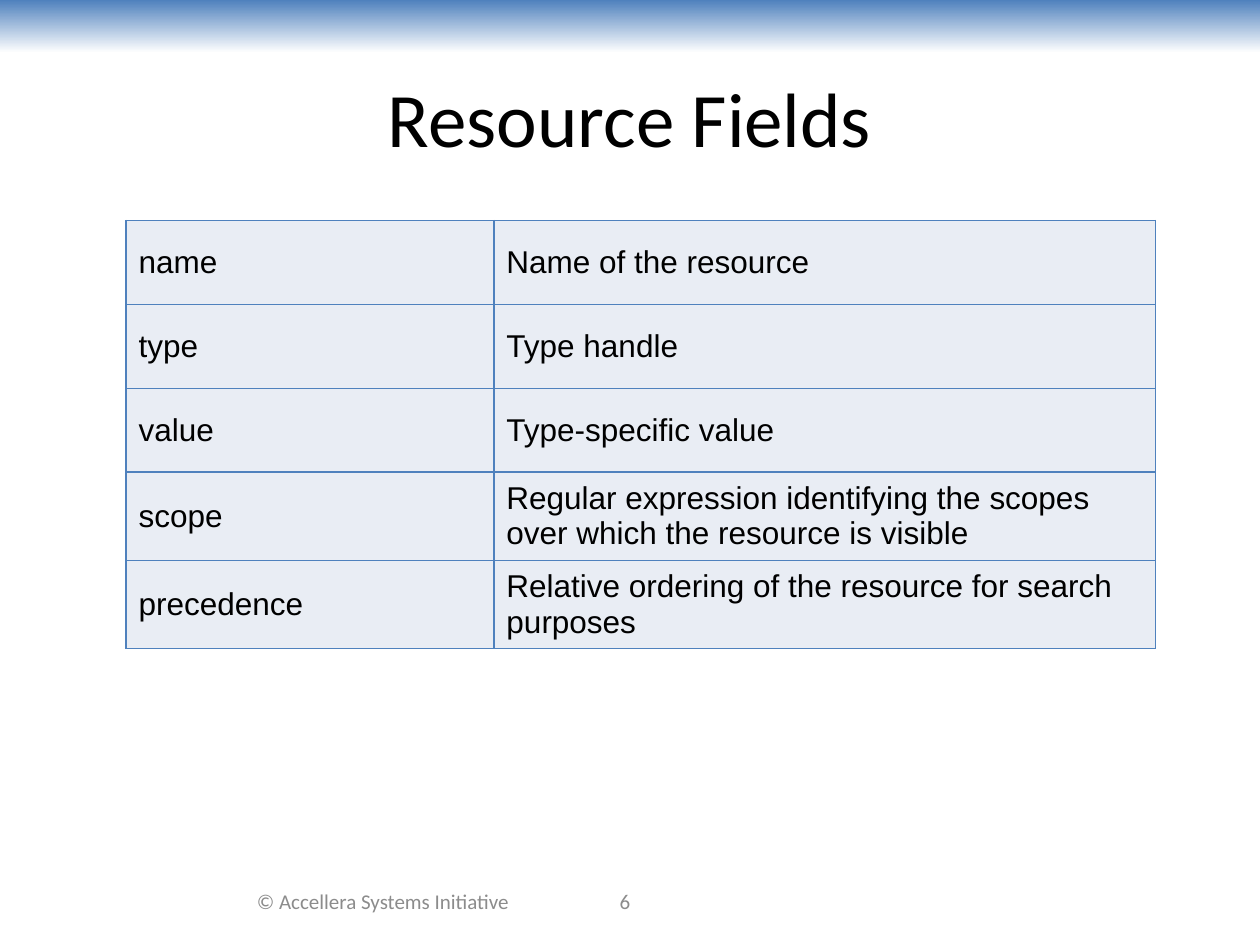
from lxml import etree
from pptx import Presentation
from pptx import util as u
from pptx.dml.color import RGBColor
from pptx.enum import shapes, text
from pptx.oxml.ns import qn

BLUE = RGBColor(0x4F, 0x81, 0xBD)
WHITE = RGBColor(0xFF, 0xFF, 0xFF)
BLACK = RGBColor(0, 0, 0)
GREY = RGBColor(0x8C, 0x8C, 0x8C)
PALE = RGBColor(0xE9, 0xED, 0xF4)

FIELDS = [
    ("name", "Name of the resource"),
    ("type", "Type handle"),
    ("value", "Type-specific value"),
    ("scope", "Regular expression identifying the scopes over which the resource is visible"),
    ("precedence", "Relative ordering of the resource for search purposes"),
]


def inches(*box):
    return [u.Inches(v) for v in box]


def style(p, font, size, color):
    p.font.name, p.font.size = font, u.Pt(size)
    p.font.color.rgb = color


def add_band(s, box):
    sp = s.shapes.add_shape(shapes.MSO_SHAPE.RECTANGLE, *inches(*box))
    sp.shadow.inherit = False
    sp.line.fill.background()
    sp.fill.gradient()
    sp.fill.gradient_angle = 270
    for stop, color, position in zip(sp.fill.gradient_stops, (BLUE, WHITE), (0, 1)):
        stop.color.rgb = color
        stop.position = position


def add_label(s, box, wording, size, color):
    tf = s.shapes.add_textbox(*inches(*box)).text_frame
    tf.word_wrap = True
    tf.vertical_anchor = text.MSO_ANCHOR.MIDDLE
    p = tf.paragraphs[0]
    p.text = wording
    p.alignment = text.PP_ALIGN.CENTER
    style(p, "Calibri", size, color)


def add_borders(cell):
    tc_pr = cell._tc.get_or_add_tcPr()
    for side in ("lnL", "lnR", "lnT", "lnB"):
        ln = etree.SubElement(tc_pr, qn(f"a:{side}"), w=str(u.Pt(1)))
        fill = etree.SubElement(ln, qn("a:solidFill"))
        etree.SubElement(fill, qn("a:srgbClr"), val=str(BLUE))


def add_fields_table(s, box, shares):
    left, top, width, height = inches(*box)
    table = s.shapes.add_table(len(FIELDS), len(shares), left, top, width, height).table
    table.first_row = table.horz_banding = False
    for column, share in zip(table.columns, shares):
        column.width = int(width * share / sum(shares))
    for row, wordings in zip(table.rows, FIELDS):
        for cell, wording in zip(row.cells, wordings):
            cell.text = wording
            cell.vertical_anchor = text.MSO_ANCHOR.MIDDLE
            add_borders(cell)
            cell.fill.solid()
            cell.fill.fore_color.rgb = PALE
            style(cell.text_frame.paragraphs[0], "Arial", 18, BLACK)


def main():
    prs = Presentation()
    prs.slide_width, prs.slide_height = inches(10, 7.5)
    s = prs.slides.add_slide(prs.slide_layouts[6])
    add_band(s, (0, 0, 10, 0.42))
    add_label(s, (0.5, 0.3, 9, 1.25), "Resource Fields", 44, BLACK)
    add_label(s, (1.83, 6.95, 2.42, 0.4), "© Accellera Systems Initiative", 12, GREY)
    add_label(s, (4, 6.95, 1.92, 0.4), "6", 12, GREY)
    add_fields_table(s, (1, 1.75, 8.17, 3.33), (2.92, 5.25))
    prs.save("out.pptx")


if __name__ == "__main__":
    main()
